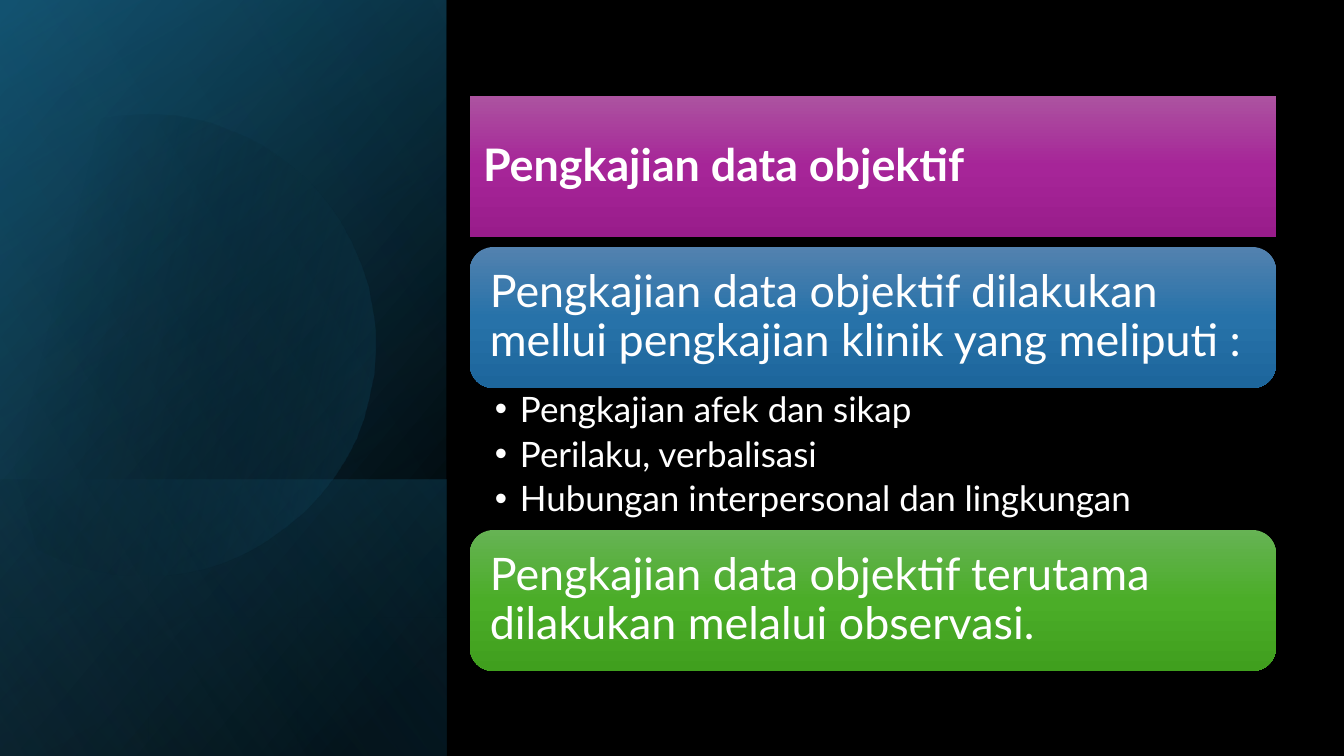
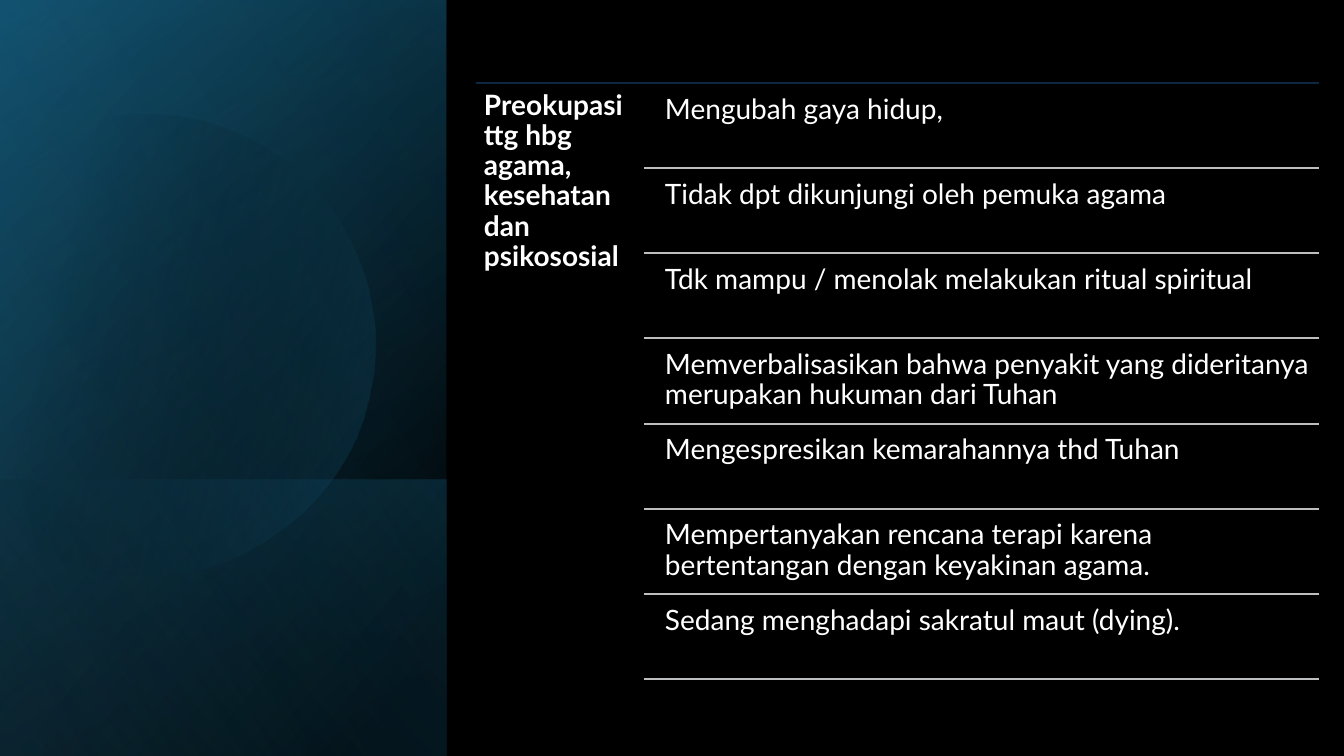
from pptx import Presentation
from pptx.dml.color import RGBColor
from pptx.enum.shapes import MSO_CONNECTOR, MSO_SHAPE
from pptx.enum.text import MSO_ANCHOR, MSO_AUTO_SIZE, PP_ALIGN
from pptx.oxml import parse_xml
from pptx.oxml.ns import nsdecls, qn
from pptx.util import Pt

# Shared look
EMU_PER_PX = 914400 / 100.8
SLIDE_W, SLIDE_H = 1344, 756
FONT = "Lato"
BLACK = RGBColor(0x00, 0x00, 0x00)
WHITE = RGBColor(0xFF, 0xFF, 0xFF)
NAVY = RGBColor(0x0E, 0x28, 0x41)
GREY = RGBColor(0xBD, 0xBE, 0xC0)
DEEP_TEAL = RGBColor(0x10, 0x48, 0x62)
TEAL = RGBColor(0x15, 0x60, 0x82)
SKY = RGBColor(0x46, 0xB1, 0xE1)

# Gradients: (position %, colour, opacity %)
PURPLE = [(0, RGBColor(0xAC, 0x53, 0xA0), 100), (50, RGBColor(0xA6, 0x25, 0x98), 100),
          (100, RGBColor(0x99, 0x1C, 0x8B), 100)]
BLUE = [(0, RGBColor(0x53, 0x82, 0xAF), 100), (50, RGBColor(0x27, 0x72, 0xA9), 100),
        (100, RGBColor(0x1D, 0x66, 0x9C), 100)]
GREEN = [(0, RGBColor(0x66, 0xB3, 0x54), 100), (50, RGBColor(0x4B, 0xAD, 0x28), 100),
         (100, RGBColor(0x40, 0x9F, 0x1E), 100)]

# Backdrop panels: top of the panel, gradient, angle
PANEL_W = 446
LOWER_PANELS = [
    (0, [(8, BLACK, 100), (100, DEEP_TEAL, 100)], 50),
    (0, [(0, BLACK, 0), (99, TEAL, 46)], 30),
    (480, [(2, TEAL, 29), (100, BLACK, 30)], 130),
]
DISC_GLOW = [(29, BLACK, 0), (100, TEAL, 43)]
TOP_PANEL = (0, [(0, BLACK, 0), (99, SKY, 11)], 120)

# Disc outline: one point is a line, three points are a curve
DISC_START = (150, 111)
DISC_PARTS = [
    [(248, 113), (338, 178), (366, 277)],
    [(401, 400), (331, 527), (209, 562)],
    [(132, 585), (53, 566), (-3, 518)],
    [(-15, 507)],
    [(-15, 176)],
    [(0, 162)],
    [(23, 143), (50, 128), (81, 120)],
    [(104, 114), (127, 111), (150, 111)],
]
DISC_SHIFT = (-1, -6)
DISC_ROTATION = 343.9
CURVE_STEPS = 16

# Slide 1
OBJECTIVE_TITLE = "Pengkajian data objektif"
CLINICAL_CARDS = [
    (247, BLUE, "Pengkajian data objektif dilakukan mellui pengkajian klinik yang meliputi :"),
    (530, GREEN, "Pengkajian data objektif terutama dilakukan melalui observasi."),
]
CLINICAL_POINTS = [
    "Pengkajian afek dan sikap",
    "Perilaku, verbalisasi",
    "Hubungan interpersonal dan lingkungan",
]
CARD_X, CARD_W, CARD_H = 470, 806, 141
TITLE_CARD_Y, POINTS_Y = 96, 388

# Slide 2
PREOCCUPATION_TITLE = "Preokupasi ttg hbg agama, kesehatan dan psikososial"
PREOCCUPATIONS = [
    "Mengubah gaya hidup,",
    "Tidak dpt dikunjungi oleh pemuka agama",
    "Tdk mampu / menolak melakukan ritual spiritual",
    "Memverbalisasikan bahwa penyakit yang dideritanya merupakan hukuman dari Tuhan",
    "Mengespresikan kemarahannya thd Tuhan",
    "Mempertanyakan rencana terapi karena bertentangan dengan keyakinan agama.",
    "Sedang menghadapi sakratul maut (dying).",
]
LIST_X, LIST_RIGHT, LIST_TOP, LIST_BOTTOM = 476, 1319, 83, 679
RULE_X, ENTRY_X, ENTRY_GAP = 644, 657, 4


def px(length):
    return round(length * EMU_PER_PX)


def place(shape, *box):
    shape.left, shape.top, shape.width, shape.height = map(px, box)


def fill_gradient(shape, stops, angle):
    """Fill with a gradient whose stops may be see-through."""
    marks = "".join(
        f'<a:gs pos="{pos * 1000}"><a:srgbClr val="{color}">'
        f'<a:alpha val="{opacity * 1000}"/></a:srgbClr></a:gs>'
        for pos, color, opacity in stops)
    shape.fill.solid()
    properties = shape.element.spPr
    properties.replace(properties.find(qn("a:solidFill")), parse_xml(
        f'<a:gradFill {nsdecls("a")} rotWithShape="1"><a:gsLst>{marks}</a:gsLst>'
        f'<a:lin ang="{angle * 60000}" scaled="0"/></a:gradFill>'))
    shape.line.fill.background()


def write(shape, lines, size, insets, anchor=MSO_ANCHOR.TOP, bold=False, after=0):
    frame = shape.text_frame
    frame.word_wrap = True
    frame.auto_size = MSO_AUTO_SIZE.NONE
    frame.vertical_anchor = anchor
    frame.margin_left = frame.margin_right = px(insets[0])
    frame.margin_top = frame.margin_bottom = px(insets[1])
    for i, line in enumerate(lines):
        paragraph = frame.add_paragraph() if i else frame.paragraphs[0]
        paragraph.alignment = PP_ALIGN.LEFT
        paragraph.line_spacing = 0.9
        paragraph.space_before, paragraph.space_after = Pt(0), Pt(after)
        run = paragraph.add_run()
        run.text = line
        run.font.name, run.font.size, run.font.bold = FONT, Pt(size), bold
        run.font.color.rgb = WHITE


def add_rule(slide, left, y, color, width):
    rule = slide.shapes.add_connector(
        MSO_CONNECTOR.STRAIGHT, px(left), px(y), px(LIST_RIGHT), px(y))
    rule.line.color.rgb, rule.line.width = color, Pt(width)
    rule.element.spPr.append(parse_xml(f'<a:effectLst {nsdecls("a")}/>'))


# Backdrop
def add_panel(slide, top, stops, angle):
    """A quarter-turned, mirrored panel reaching from top to the slide's foot."""
    length = SLIDE_H - top
    panel = slide.shapes.add_shape(MSO_SHAPE.RECTANGLE, 0, 0, 0, 0)
    place(panel, (PANEL_W - length) / 2, top + (length - PANEL_W) / 2, length, PANEL_W)
    panel.rotation = 90
    panel.element.spPr.find(qn("a:xfrm")).set("flipH", "1")
    panel.shadow.inherit = False
    fill_gradient(panel, stops, angle)
    return panel


def disc_points():
    start = DISC_START
    for part in DISC_PARTS:
        if len(part) == 1:
            yield part[0]
        else:
            for step in range(1, CURVE_STEPS + 1):
                t = step / CURVE_STEPS
                weights = ((1 - t) ** 3, 3 * t * (1 - t) ** 2, 3 * t * t * (1 - t), t ** 3)
                yield tuple(sum(w * p[axis] for w, p in zip(weights, [start, *part]))
                            for axis in (0, 1))
        start = part[-1]


def add_disc(slide):
    builder = slide.shapes.build_freeform(*DISC_START, scale=EMU_PER_PX)
    builder.add_line_segments(list(disc_points()), close=True)
    disc = builder.convert_to_shape()
    disc.left += px(DISC_SHIFT[0])
    disc.top += px(DISC_SHIFT[1])
    disc.rotation = DISC_ROTATION
    disc.shadow.inherit = False
    fill_gradient(disc, DISC_GLOW, 30)
    return disc


def set_backdrop(master, slide):
    """Draw the backdrop on a slide, then hand it to the master for all slides."""
    master.background.fill.solid()
    master.background.fill.fore_color.rgb = BLACK
    parts = [add_panel(slide, *panel) for panel in LOWER_PANELS]
    parts += [add_disc(slide), add_panel(slide, *TOP_PANEL)]
    for i, part in enumerate(parts):
        part.element.nvSpPr.cNvPr.set("id", str(100 + i))
        master.shapes.element.insert(2 + i, part.element)


# Slides
def style_card(card, top, stops, text, bold=False):
    place(card, CARD_X, top, CARD_W, CARD_H)
    fill_gradient(card, stops, 90)
    write(card, [text], 32, (13, 13), MSO_ANCHOR.MIDDLE, bold)


def fill_objective_slide(slide):
    title, points = slide.placeholders
    place(title, CARD_X, TITLE_CARD_Y, CARD_W, CARD_H)
    title.element.spPr.append(parse_xml(
        f'<a:prstGeom {nsdecls("a")} prst="roundRect"><a:avLst/></a:prstGeom>'))
    style_card(title, TITLE_CARD_Y, PURPLE, OBJECTIVE_TITLE, bold=True)

    for top, stops, text in CLINICAL_CARDS:
        card = slide.shapes.add_shape(MSO_SHAPE.ROUNDED_RECTANGLE, 0, 0, 0, 0)
        card.shadow.inherit = False
        style_card(card, top, stops, text)

    place(points, CARD_X, POINTS_Y, CARD_W, 142)
    write(points, CLINICAL_POINTS, 25, (25, 4), after=5)
    for paragraph in points.text_frame.paragraphs:
        properties = paragraph._p.get_or_add_pPr()
        properties.set("marL", str(px(25)))
        properties.set("indent", str(px(-25)))


def fill_preoccupation_slide(slide):
    title = slide.shapes.title
    place(title, LIST_X, LIST_TOP, RULE_X - LIST_X, LIST_BOTTOM - LIST_TOP)
    write(title, [PREOCCUPATION_TITLE], 20, (8, 8), bold=True)
    add_rule(slide, LIST_X, LIST_TOP, NAVY, 1)

    pitch = (LIST_BOTTOM - LIST_TOP) / len(PREOCCUPATIONS)
    for i, text in enumerate(PREOCCUPATIONS):
        top = LIST_TOP + i * pitch
        entry = slide.shapes.add_textbox(0, 0, 0, 0)
        place(entry, ENTRY_X, top + ENTRY_GAP, LIST_RIGHT - ENTRY_X, pitch - ENTRY_GAP)
        write(entry, [text], 20, (8, 8))
        add_rule(slide, RULE_X, top + pitch, GREY, 1.5)


def main():
    deck = Presentation()
    deck.slide_width, deck.slide_height = px(SLIDE_W), px(SLIDE_H)
    title_and_content, title_only = deck.slide_layouts[1], deck.slide_layouts[5]
    objective = deck.slides.add_slide(title_and_content)
    set_backdrop(deck.slide_master, objective)
    fill_objective_slide(objective)
    fill_preoccupation_slide(deck.slides.add_slide(title_only))
    deck.save("out.pptx")


if __name__ == "__main__":
    main()
